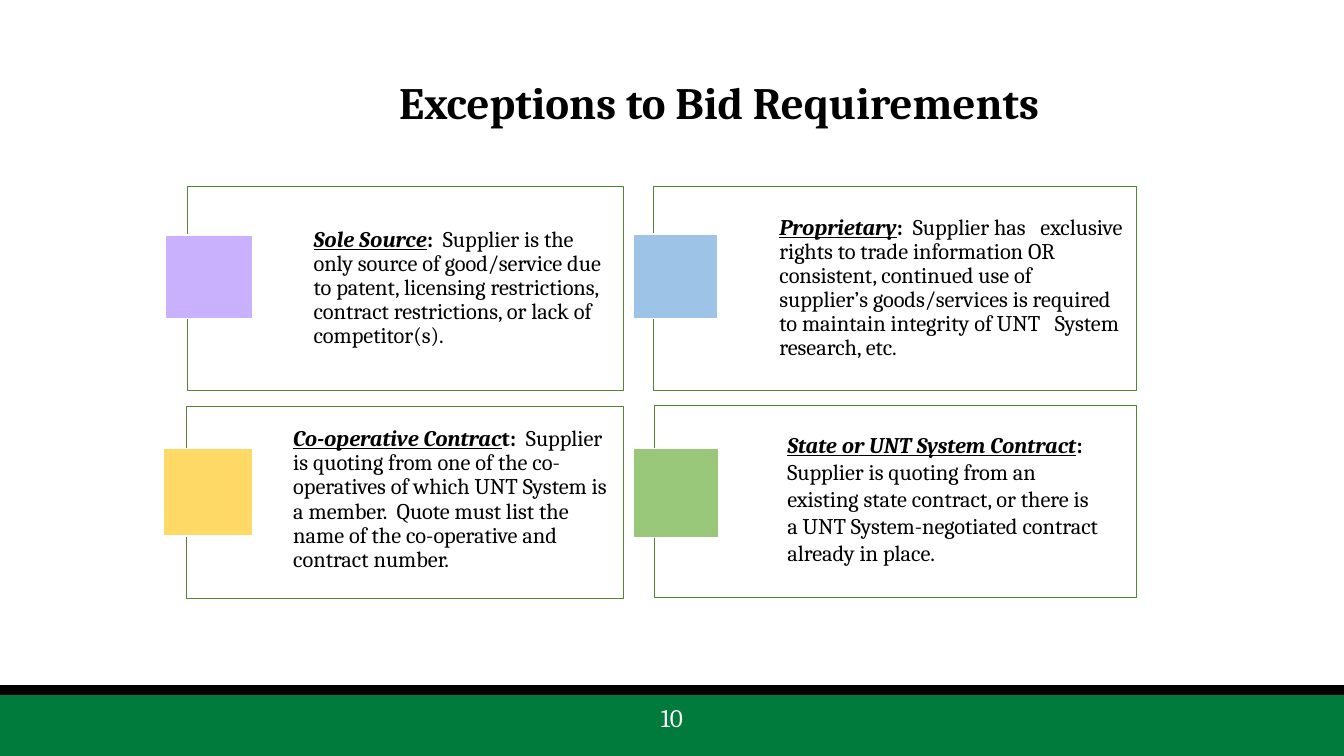
from lxml.etree import SubElement
from pptx import Presentation
from pptx.dml.color import RGBColor
from pptx.enum.shapes import MSO_SHAPE
from pptx.enum.text import MSO_ANCHOR, MSO_AUTO_SIZE, PP_ALIGN
from pptx.oxml.ns import qn
from pptx.util import Inches, Pt

BLACK, WHITE, GREEN = "000000", "FFFFFF", "007B3B"
FRAME_GREEN = "548235"


def color(value):
    return RGBColor.from_string(value)


class SlideBuilder:
    font = "Cambria"

    def __init__(self, presentation):
        # Layout 5 holds only a title
        self.slide = presentation.slides.add_slide(presentation.slide_layouts[5])

    def rectangle(self, place, fill, line, line_width=1, opacity=100):
        shape = self.slide.shapes.add_shape(
            MSO_SHAPE.RECTANGLE, *(Inches(length) for length in place))
        shape.shadow.inherit = False
        shape.fill.solid()
        shape.fill.fore_color.rgb = color(fill)
        shape.line.color.rgb = color(line)
        shape.line.width = Pt(line_width)
        if opacity < 100:
            fill_color = shape.element.spPr.find(qn("a:solidFill"))[0]
            SubElement(fill_color, qn("a:alpha")).set("val", str(opacity * 1000))
        return shape

    def text_box(self, place):
        return self.slide.shapes.add_textbox(*(Inches(length) for length in place))

    def add_text(self, shape, paragraphs, size=16, text_color=BLACK,
                 align=PP_ALIGN.LEFT, spacing=1.0, anchor=MSO_ANCHOR.TOP):
        """Each paragraph is a list of (text, style letters from "biu")."""
        frame = shape.text_frame
        frame.word_wrap = True
        frame.auto_size = MSO_AUTO_SIZE.NONE
        frame.vertical_anchor = anchor
        for index, runs in enumerate(paragraphs):
            paragraph = frame.add_paragraph() if index else frame.paragraphs[0]
            paragraph.alignment = align
            paragraph.line_spacing = spacing
            for text, style in runs:
                run = paragraph.add_run()
                run.text = text
                run.font.name = self.font
                run.font.size = Pt(size)
                run.font.color.rgb = color(text_color)
                run.font.bold = "b" in style
                run.font.italic = "i" in style
                run.font.underline = "u" in style

    def title(self, place, text):
        shape = self.slide.shapes.title
        shape.left, shape.top, shape.width, shape.height = (
            Inches(length) for length in place)
        self.add_text(shape, [[(text, "b")]], size=32, align=PP_ALIGN.CENTER)

    def card(self, frame_place, square_place, square_color, paragraphs,
             text_place=None, spacing=0.9):
        """A framed card; its text sits in the frame unless a place is given."""
        frame = self.rectangle(frame_place, WHITE, FRAME_GREEN, 0.5, opacity=40)
        self.rectangle(square_place, square_color, WHITE)
        if text_place:
            self.add_text(self.text_box(text_place), paragraphs, spacing=spacing)
            return
        text_frame = frame.text_frame
        text_frame.margin_left = Inches(1.25)
        text_frame.margin_top = text_frame.margin_right = Inches(0.12)
        text_frame.margin_bottom = Inches(0.12)
        self.add_text(frame, paragraphs, spacing=spacing, anchor=MSO_ANCHOR.MIDDLE)


def main():
    presentation = Presentation()
    presentation.slide_width = Inches(13.33)
    presentation.slide_height = Inches(7.5)
    builder = SlideBuilder(presentation)

    # Footer band with page number
    builder.rectangle((0, 6.89, 13.33, 0.61), GREEN, GREEN)
    builder.rectangle((0, 6.8, 13.33, 0.09), BLACK, BLACK)
    builder.add_text(builder.text_box((0, 6.95, 13.33, 0.5)), [[("10", "")]],
                     size=18, text_color=WHITE, align=PP_ALIGN.CENTER, spacing=0.9)

    # Title
    builder.title((3.09, 0.69, 8.09, 0.64), "Exceptions to Bid Requirements")

    # Top row of cards
    builder.card(
        (1.86, 1.85, 4.32, 2.02), (1.64, 2.33, 0.87, 0.83), "CAB1FD",
        [[("Sole Source", "biu"), (":  ", "b"),
          ("Supplier is the only source of good/service due to patent, "
           "licensing restrictions, contract restrictions, or lack of "
           "competitor(s).", "")]])
    builder.card(
        (6.48, 1.85, 4.79, 2.02), (6.28, 2.32, 0.84, 0.84), "9DC3E6",
        [[("Proprietary", "biu"), (":  ", "b"),
          ("Supplier has   exclusive rights to trade information OR "
           "consistent, continued use of supplier’s goods/services is "
           "required to maintain integrity of UNT   System research, etc.", "")]])

    # Bottom row of cards
    builder.card(
        (1.85, 4.03, 4.33, 1.91), (1.62, 4.45, 0.89, 0.87), "FFD966",
        [[("Co-operative Contrac", "biu"), ("t:  ", "b"),
          ("Supplier is quoting from one of the co-operatives of which UNT "
           "System is a member.  Quote must list the name of the "
           "co-operative and contract number.", "")]],
        text_place=(2.81, 4.19, 3.35, 1.56))
    builder.card(
        (6.49, 4.02, 4.78, 1.91), (6.28, 4.45, 0.85, 0.88), "9AC87A",
        [[("State or UNT System Contract", "biu"), (":", "b")],
         [("Supplier is quoting from an existing state contract, or there is "
           "a UNT System-negotiated contract already in place.", "")]],
        text_place=(7.71, 4.23, 3.31, 1.72), spacing=1.0)

    presentation.save("out.pptx")


if __name__ == "__main__":
    main()
